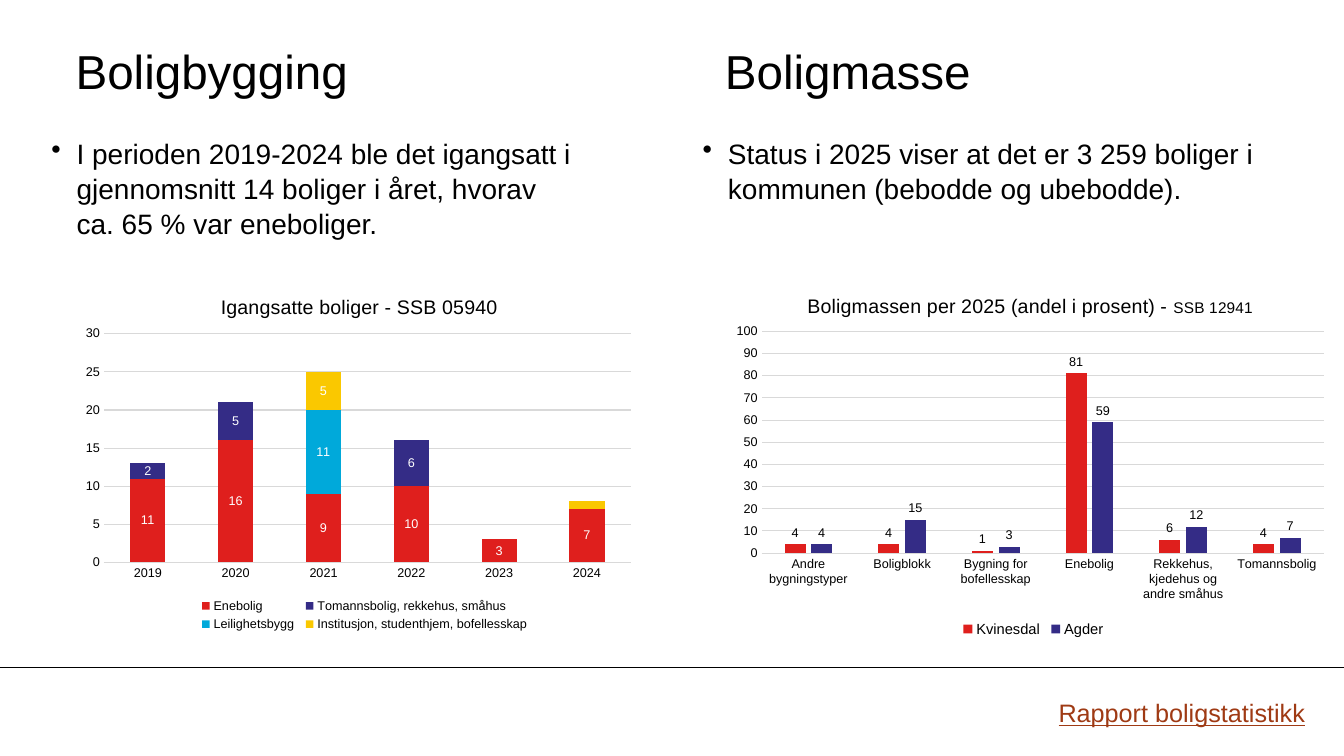
from lxml import etree
from pptx import Presentation
from pptx import util as u
from pptx.chart.data import CategoryChartData
from pptx.dml.color import RGBColor
from pptx.enum import chart as ec
from pptx.enum import shapes, text
from pptx.oxml import ns

BLACK = RGBColor(0, 0, 0)
WHITE = RGBColor(255, 255, 255)
GREY = RGBColor(0xD9, 0xD9, 0xD9)
RUST = RGBColor(0x9F, 0x3A, 0x14)
RED = RGBColor(0xDF, 0x1F, 0x1D)
NAVY = RGBColor(0x34, 0x2C, 0x86)
CYAN = RGBColor(0x00, 0xA9, 0xDA)
GOLD = RGBColor(0xFA, 0xC8, 0x00)


def style(font, size, color=BLACK):
    """Set the typeface, size and colour of a font."""
    font.name, font.size = "Arial", u.Pt(size)
    font.color.rgb = color


def place(shape, box):
    """Move and size a shape."""
    shape.left, shape.top, shape.width, shape.height = map(u.Inches, box)


def fill_frame(shape, words, size, inset=0, color=BLACK):
    """Write one styled paragraph into a shape."""
    frame = shape.text_frame
    frame.word_wrap = True
    frame.margin_left = frame.margin_right = u.Inches(inset)
    frame.margin_top = frame.margin_bottom = u.Inches(inset / 2)
    para = frame.paragraphs[0]
    para.text = words
    para.alignment = text.PP_ALIGN.LEFT
    style(para.font, size, color)
    return para


def add_head(shape, words, left):
    """Format a shape as a column heading."""
    place(shape, (left, 0.32, 4.99, 0.75))
    fill_frame(shape, words, 34)
    shape.text_frame.vertical_anchor = text.MSO_ANCHOR.MIDDLE


def add_point(slide, words, box):
    """Add a bulleted paragraph."""
    shape = slide.shapes.add_textbox(*map(u.Inches, box))
    para = fill_frame(shape, words, 20)
    para.line_spacing = 1.04
    props = para._p.get_or_add_pPr()
    props.set("marL", str(u.Inches(0.25)))
    props.set("indent", str(-u.Inches(0.25)))
    bullet = etree.Element(ns.qn("a:buChar"), char="•")
    props.insert_element_before(bullet, "a:tabLst", "a:defRPr", "a:extLst")


def set_layout(node, index, inner=False, **sizes):
    """Give a chart part a fixed place, in fractions of the chart."""
    for old in node.findall(ns.qn("c:layout")):
        node.remove(old)
    layout = etree.Element(ns.qn("c:layout"))
    manual = etree.SubElement(layout, ns.qn("c:manualLayout"))
    marks = [("layoutTarget", "inner")] if inner else []
    marks += [("xMode", "edge"), ("yMode", "edge")]
    for name, val in marks + list(sizes.items()):
        etree.SubElement(manual, ns.qn("c:" + name), val=str(val))
    node.insert(index, layout)


def add_columns(slide, kind, box, cats, rows, title, gap, lap, peak, step):
    """Add a column chart with a title, axes and a legend."""
    data = CategoryChartData()
    data.categories = cats
    for name, vals, _ in rows:
        data.add_series(name, vals)
    chart = slide.shapes.add_chart(kind, *map(u.Inches, box), data).chart
    style(chart.font, 10)
    chart.has_title = True
    para = chart.chart_title.text_frame.paragraphs[0]
    for words, size in title:
        run = para.add_run()
        run.text = words
        style(run.font, size)
        run.font.bold = False
    plot = chart.plots[0]
    plot.vary_by_categories = False
    plot.gap_width, plot.overlap = gap, lap
    for series, (_, _, color) in zip(plot.series, rows):
        series.format.fill.solid()
        series.format.fill.fore_color.rgb = color
    for axis in (chart.category_axis, chart.value_axis):
        axis.major_tick_mark = axis.minor_tick_mark = ec.XL_TICK_MARK.NONE
        style(axis.tick_labels.font, 9)
    value = chart.value_axis
    value.minimum_scale, value.maximum_scale = 0, peak
    value.major_unit = step
    value.format.line.fill.background()
    for line in (chart.category_axis.format.line,
                 value.major_gridlines.format.line):
        line.color.rgb, line.width = GREY, u.Pt(0.75)
    chart.has_legend = True
    chart.legend.position = ec.XL_LEGEND_POSITION.BOTTOM
    chart.legend.include_in_layout = False
    return chart


def arrange(chart, size, title, plot, legend):
    """Set the legend size and the places of the chart parts."""
    style(chart.legend.font, size)
    set_layout(chart.chart_title._element, 1, x=title, y=0.05)
    set_layout(chart._chartSpace.chart.plotArea, 0, True,
               **dict(zip("xywh", plot)))
    set_layout(chart.legend._element, 1, **dict(zip("xywh", legend)))


def add_labels(series, color, spot, form="0"):
    """Show the values of a series."""
    labels = series.data_labels
    labels.show_value = True
    labels.number_format, labels.number_format_is_linked = form, False
    labels.position = spot
    style(labels.font, 9, color)


def add_starts(slide):
    """Add the stacked chart of homes started."""
    rows = [("Enebolig", (11, 16, 9, 10, 3, 7), RED),
            ("Tomannsbolig, rekkehus, småhus", (2, 5, 0, 6, 0, 0), NAVY),
            ("Leilighetsbygg", (0, 0, 11, 0, 0, 0), CYAN),
            ("Institusjon, studenthjem, bofellesskap",
             (0, 0, 5, 0, 0, 1), GOLD)]
    chart = add_columns(
        slide, ec.XL_CHART_TYPE.COLUMN_STACKED, (0.75, 2.7, 5.62, 3.6),
        [str(year) for year in range(2019, 2025)], rows,
        [("Igangsatte boliger - SSB 05940", 14)], 150, 100, 30, 5)
    arrange(chart, 9, 0.25, (0.05, 0.17, 0.93, 0.63), (0.21, 0.89, 0.6, 0.11))
    *most, last = chart.plots[0].series
    center = ec.XL_LABEL_POSITION.CENTER
    for series in most:
        add_labels(series, WHITE, center, "0;;")
    last.data_labels.show_value = False
    label = last.points[2].data_label
    style(label.font, 9, WHITE)
    label.position = center


def add_stock(slide):
    """Add the clustered chart of the housing stock."""
    cats = ["Andre bygningstyper", "Boligblokk", "Bygning for bofellesskap",
            "Enebolig", "Rekkehus, kjedehus og andre småhus", "Tomannsbolig"]
    rows = [("Kvinesdal", (4, 4, 1, 81, 6, 4), RED),
            ("Agder", (4, 15, 3, 59, 12, 7), NAVY)]
    chart = add_columns(
        slide, ec.XL_CHART_TYPE.COLUMN_CLUSTERED, (7.19, 2.7, 6.06, 3.67),
        cats, rows, [("Boligmassen per 2025 (andel i prosent) - ", 14),
                     ("SSB 12941", 11)], 219, -27, 100, 10)
    arrange(chart, 10.5, 0.13, (0.06, 0.16, 0.92, 0.6),
            (0.38, 0.93, 0.25, 0.07))
    for series in chart.plots[0].series:
        add_labels(series, BLACK, ec.XL_LABEL_POSITION.OUTSIDE_END)


def add_rule(slide):
    """Add the footer line across the slide."""
    line = slide.shapes.add_connector(
        shapes.MSO_CONNECTOR.STRAIGHT, 0, u.Inches(6.62),
        u.Inches(13.33), u.Inches(6.62))
    line.line.color.rgb, line.line.width = BLACK, u.Pt(0.75)
    etree.SubElement(line._element.spPr, ns.qn("a:effectLst"))


def main():
    """Build the slide on housing and save it."""
    deck = Presentation()
    deck.slide_width, deck.slide_height = u.Inches(13.33), u.Inches(7.5)
    slide = deck.slides.add_slide(deck.slide_layouts[5])
    add_rule(slide)
    add_head(slide.shapes.title, "Boligbygging", 0.75)
    add_point(slide, "I perioden 2019-2024 ble det igangsatt i gjennomsnitt "
              "14 boliger i året, hvorav\vca. 65 % var eneboliger.",
              (0.51, 1.34, 5.6, 1.1))
    add_head(slide.shapes.add_textbox(0, 0, 0, 0), "Boligmasse", 7.19)
    add_point(slide, "Status i 2025 viser at det er 3 259 boliger i kommunen "
              "(bebodde og ubebodde).", (6.97, 1.34, 5.86, 0.84))
    add_starts(slide)
    add_stock(slide)
    box = slide.shapes.add_textbox(*map(u.Inches, (10.4, 6.87, 2.65, 0.4)))
    link = fill_frame(box, "Rapport boligstatistikk", 18, 0.1, RUST)
    link.font.underline = True
    deck.save("out.pptx")


if __name__ == "__main__":
    main()
